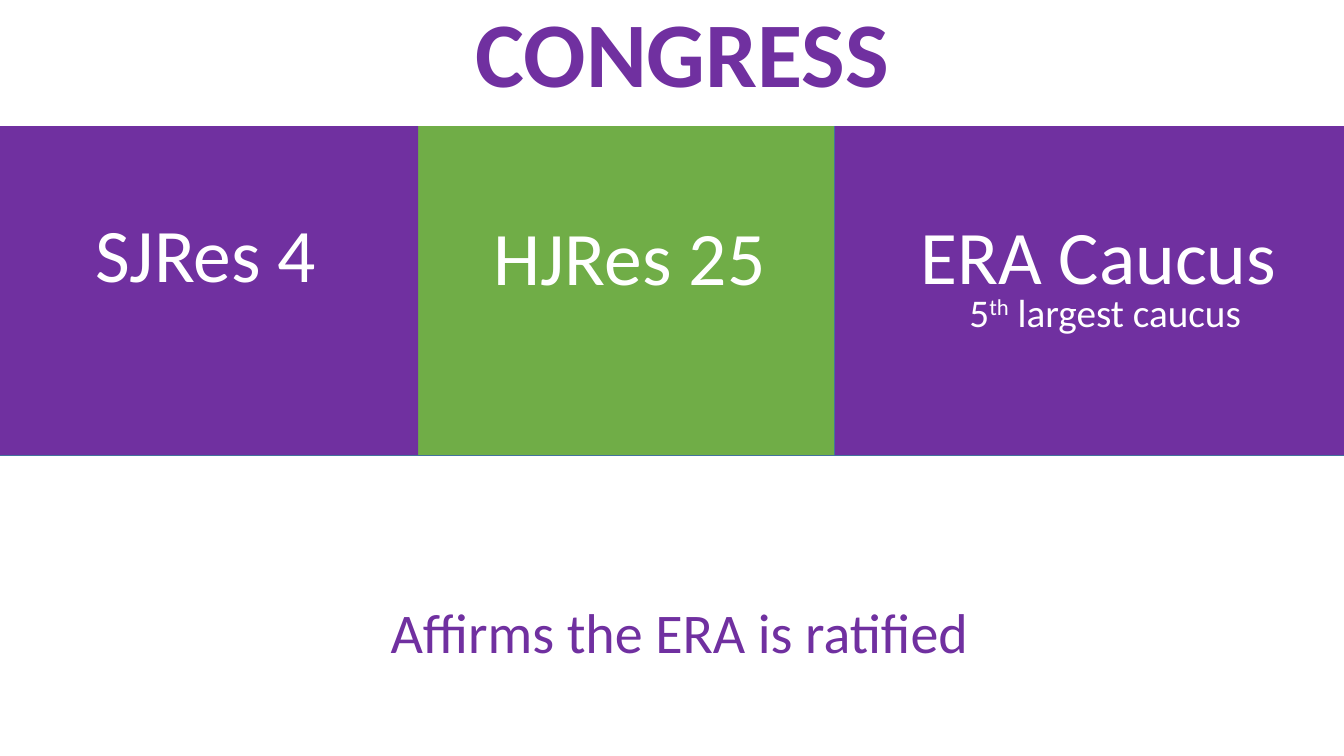
from pptx import Presentation
from pptx.dml.color import RGBColor
from pptx.enum import shapes, text
from pptx.util import Pt

PURPLE = RGBColor(0x70, 0x30, 0xA0)
GREEN = RGBColor(0x70, 0xAD, 0x47)
WHITE = RGBColor(0xFF, 0xFF, 0xFF)
EDGE = RGBColor(0x43, 0x73, 0x9E)
FONT = "Calibri"

# Panels, back to front: left, top, width, height, fill, outlined, text
PANELS = [
    (161.3, -7.2, 504, 575.3, GREEN, False, ""),
    (596.2, 43.9, 388, 524.2, PURPLE, True, ""),
    (-13.7, -20.2, 312.5, 575.3, PURPLE, False, ""),
    (-10.8, -17.3, 995, 107.3, WHITE, False, ""),
    (-13.7, 325.4, 997.9, 251.3, WHITE, True, "Affirms the ERA is ratified"),
]

# Labels: left, top, width, height, size, colour, bold, runs (text, superscript)
LABELS = [
    (332.6, -7.2, 321.8, 87.1, 66, PURPLE, True, [("CONGRESS", False)]),
    (61.2, 144, 180.7, 72.7, 54, WHITE, False, [("SJRes 4", False)]),
    (345.6, 146.2, 215.3, 72.7, 54, WHITE, False, [("HJRes 25", False)]),
    (650.2, 145.4, 280.1, 72.7, 54, WHITE, False, [("ERA Caucus", False)]),
    (685.4, 202.3, 218.2, 41, 28, WHITE, False,
     [("5", False), ("th", True), (" largest caucus", False)]),
]


def set_font(p, size, color, bold=False):
    p.font.name = FONT
    p.font.size = Pt(size)
    p.font.color.rgb = color
    p.font.bold = bold


prs = Presentation()
prs.slide_width, prs.slide_height = Pt(960), Pt(540)
s = prs.slides.add_slide(prs.slide_layouts[6])

# Colour panels
for *box, fill, outlined, words in PANELS:
    sp = s.shapes.add_shape(shapes.MSO_SHAPE.RECTANGLE, *map(Pt, box))
    sp.shadow.inherit = False
    sp.fill.solid()
    sp.fill.fore_color.rgb = fill
    if outlined:
        sp.line.color.rgb = EDGE
        sp.line.width = Pt(1)
    else:
        sp.line.fill.background()
    if words:
        tf = sp.text_frame
        tf.word_wrap = True
        tf.vertical_anchor = text.MSO_ANCHOR.MIDDLE
        p = tf.paragraphs[0]
        p.text = words
        p.alignment = text.PP_ALIGN.CENTER
        set_font(p, 40, PURPLE)

# Title and panel labels
for *box, size, color, bold, runs in LABELS:
    tf = s.shapes.add_textbox(*map(Pt, box)).text_frame
    tf.word_wrap = False
    tf.auto_size = text.MSO_AUTO_SIZE.SHAPE_TO_FIT_TEXT
    p = tf.paragraphs[0]
    set_font(p, size, color, bold)
    for words, superscript in runs:
        r = p.add_run()
        r.text = words
        if superscript:
            r._r.get_or_add_rPr().set("baseline", "30000")

prs.save("out.pptx")
